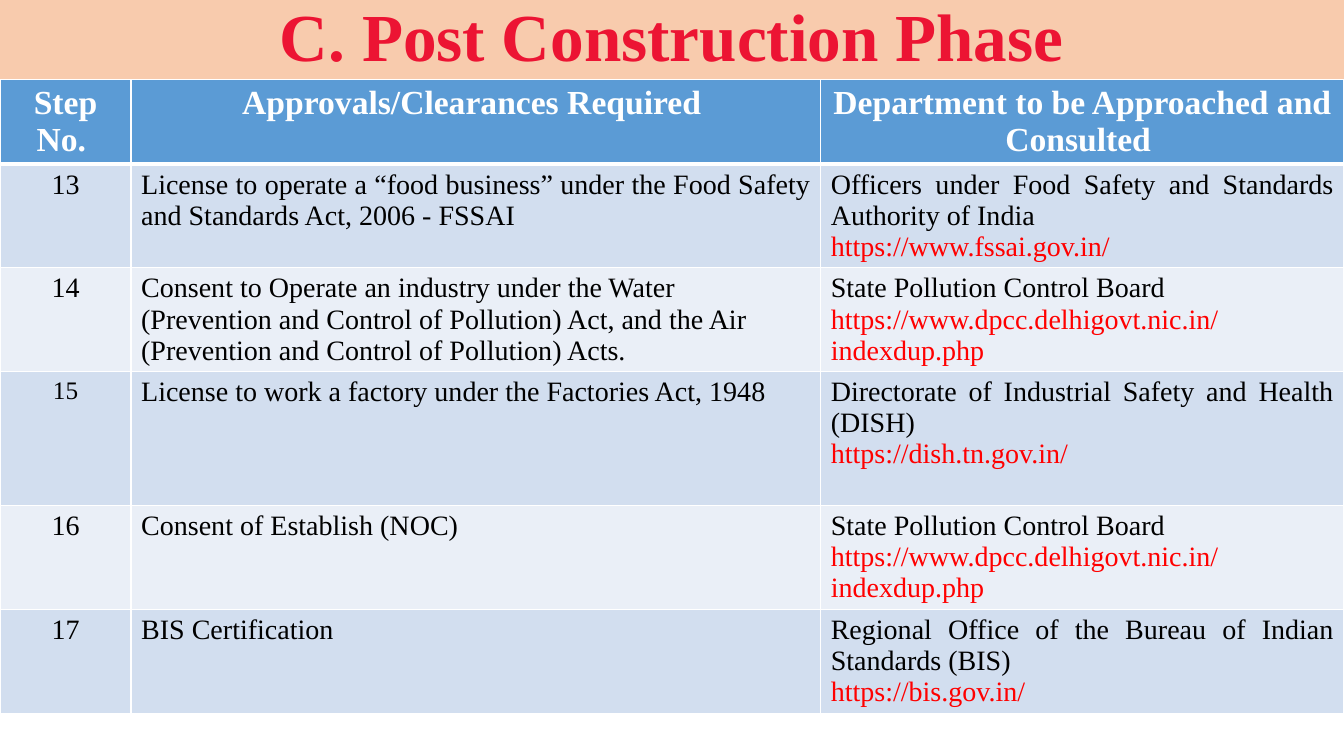
from lxml import etree
from pptx import Presentation
from pptx.dml.color import RGBColor
from pptx.enum.shapes import MSO_SHAPE as Shape
from pptx.enum.text import MSO_ANCHOR as Anchor, PP_ALIGN as Align
from pptx.oxml.ns import qn
from pptx.util import Inches, Pt

FONT = "Times New Roman"
COLORS = {
    "title_band": "F8CBAD",
    "title": "EC1433",
    "header": "5B9BD5",
    "odd_row": "D2DEEF",
    "even_row": "EAEFF7",
    "white": "FFFFFF",
    "black": "000000",
    "link": "FF0000",
}
SLIDE_WIDTH, SLIDE_HEIGHT = 13.33, 7.5
BAND_HEIGHT = 0.79
COLUMN_WIDTHS = [1.3, 6.84, 5.19]
ROW_HEIGHTS = [0.83, 1.03, 1.03, 1.33, 1.03, 1.03]

HEADINGS = [
    "Step No. ",
    "Approvals/Clearances Required ",
    "Department to be Approached and Consulted ",
]
# step, step size, approval, approval alignment, department, web address
STEPS = [
    ("13", 20, "License to operate a “food business” under the Food Safety "
     "and Standards Act, 2006 - FSSAI", Align.JUSTIFY,
     "Officers under Food Safety and Standards Authority of India ",
     "https://www.fssai.gov.in/"),
    ("14", 20, "Consent to Operate an industry under the Water (Prevention and "
     "Control of Pollution) Act, and the Air (Prevention and Control of "
     "Pollution) Acts.", Align.LEFT,
     "State Pollution Control Board",
     "https://www.dpcc.delhigovt.nic.in/indexdup.php"),
    ("15", 18, "License to work a factory under the Factories Act, 1948",
     Align.LEFT,
     "Directorate of Industrial Safety and Health (DISH)",
     "https://dish.tn.gov.in/"),
    ("16", 20, "Consent of Establish (NOC)", Align.JUSTIFY,
     "State Pollution Control Board ",
     "https://www.dpcc.delhigovt.nic.in/indexdup.php"),
    ("17", 20, "BIS Certification", Align.LEFT,
     "Regional Office of the Bureau of Indian Standards (BIS)",
     "https://bis.gov.in/"),
]


def color(name):
    return RGBColor.from_string(COLORS[name])


def style_paragraph(para, size, color_name, align, bold=False):
    para.alignment = align
    for span in para.runs:
        span.font.name = FONT
        span.font.size = Pt(size)
        span.font.bold = bold
        span.font.color.rgb = color(color_name)


def add_title_band(page, text):
    band = page.shapes.add_shape(Shape.RECTANGLE, 0, 0,
                                 Inches(SLIDE_WIDTH), Inches(BAND_HEIGHT))
    band.shadow.inherit = False
    band.fill.solid()
    band.fill.fore_color.rgb = color("title_band")
    band.line.fill.background()
    frame = band.text_frame
    frame.word_wrap = True
    frame.vertical_anchor = Anchor.MIDDLE
    frame.text = text
    para = frame.paragraphs[0]
    para.line_spacing = 0.9
    style_paragraph(para, 48, "title", Align.CENTER, bold=True)


def set_borders(cell, bottom_width):
    """Draw white borders, which must come before the fill in the cell XML."""
    properties = cell._tc.get_or_add_tcPr()
    widths = {"a:lnL": 1, "a:lnR": 1, "a:lnT": 1, "a:lnB": bottom_width}
    for position, (tag, width) in enumerate(widths.items()):
        line = etree.Element(qn(tag), w=str(Pt(width)))
        fill = etree.SubElement(line, qn("a:solidFill"))
        etree.SubElement(fill, qn("a:srgbClr"), val=COLORS["white"])
        properties.insert(position, line)


def fill_cell(cell, text, fill_name, size, color_name, align, bold=False):
    cell.fill.solid()
    cell.fill.fore_color.rgb = color(fill_name)
    cell.text_frame.text = text
    for para in cell.text_frame.paragraphs:
        style_paragraph(para, size, color_name, align, bold)


def add_approvals_table(page):
    frame = page.shapes.add_table(
        len(ROW_HEIGHTS), len(COLUMN_WIDTHS), 0, Inches(BAND_HEIGHT),
        Inches(SLIDE_WIDTH), Inches(sum(ROW_HEIGHTS)))
    table = frame.table
    for column, width in zip(table.columns, COLUMN_WIDTHS):
        column.width = Inches(width)
    for row, height in zip(table.rows, ROW_HEIGHTS):
        row.height = Inches(height)

    for index, heading in enumerate(HEADINGS):
        fill_cell(table.cell(0, index), heading, "header", 24, "white",
                  Align.CENTER, bold=True)

    for index, step in enumerate(STEPS, start=1):
        number, number_size, approval, approval_align, department, link = step
        fill_name = "odd_row" if index % 2 else "even_row"
        fill_cell(table.cell(index, 0), number, fill_name, number_size,
                  "black", Align.CENTER)
        fill_cell(table.cell(index, 1), approval, fill_name, 20,
                  "black", approval_align)
        department_cell = table.cell(index, 2)
        fill_cell(department_cell, f"{department}\n{link}", fill_name, 20,
                  "black", Align.JUSTIFY)
        style_paragraph(department_cell.text_frame.paragraphs[1], 20,
                        "link", Align.JUSTIFY)

    for index, row in enumerate(table.rows):
        for cell in row.cells:
            set_borders(cell, bottom_width=3 if index == 0 else 1)


def main():
    deck = Presentation()
    deck.slide_width = Inches(SLIDE_WIDTH)
    deck.slide_height = Inches(SLIDE_HEIGHT)
    page = deck.slides.add_slide(deck.slide_layouts[6])
    add_title_band(page, "C. Post Construction Phase")
    add_approvals_table(page)
    deck.save("out.pptx")


if __name__ == "__main__":
    main()
